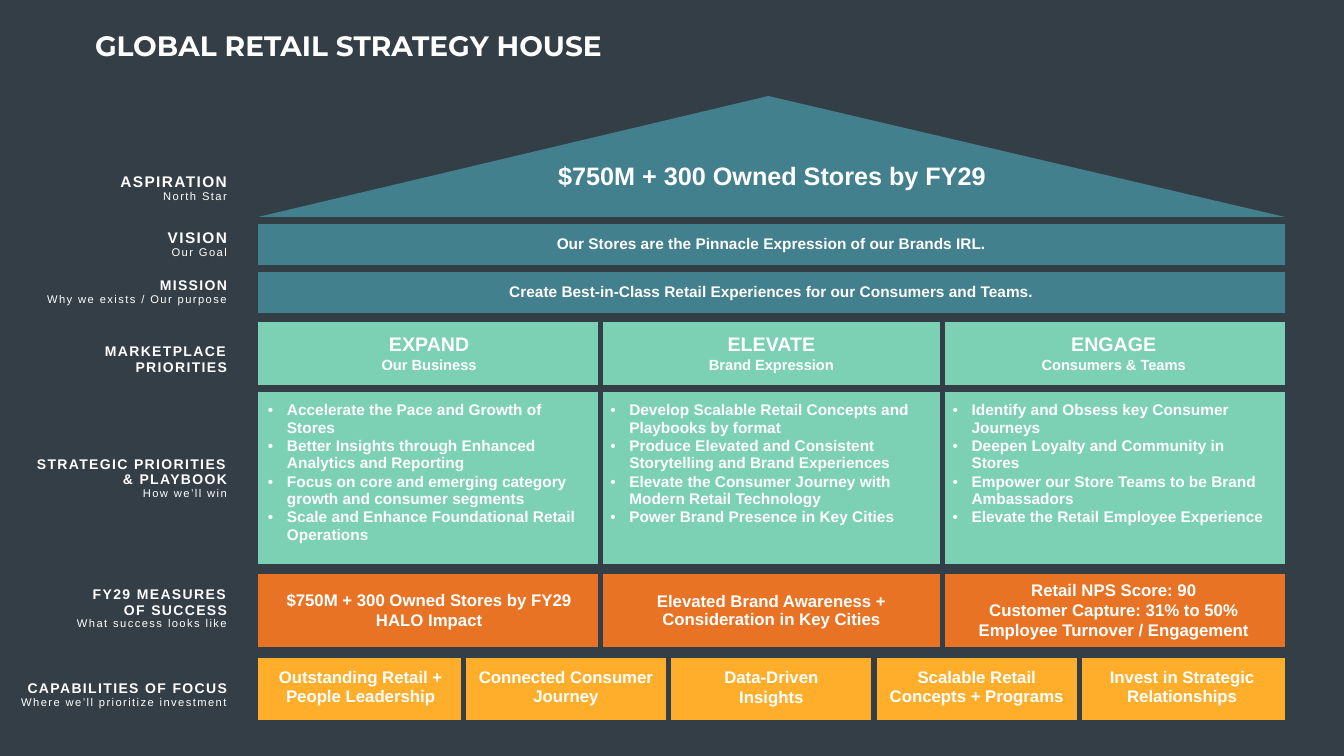
"""Build the retail strategy house slide."""
from lxml import etree
from pptx import Presentation
from pptx.dml.color import RGBColor
from pptx.enum.shapes import MSO_SHAPE
from pptx.enum.text import MSO_ANCHOR, PP_ALIGN
from pptx.oxml.ns import qn
from pptx.util import Emu, Pt

LEFT, MID, RIGHT = PP_ALIGN.LEFT, PP_ALIGN.CENTER, PP_ALIGN.RIGHT
TOP, CENTER = MSO_ANCHOR.TOP, MSO_ANCHOR.MIDDLE
TRIANGLE = MSO_SHAPE.ISOSCELES_TRIANGLE

DARK, WHITE = "333E47", "FFFFFF"
TEAL, MINT, ORANGE, YELLOW = "43808E", "7CD1B4", "E87324", "FFAE2C"
HOUSE_X, HOUSE_W = 258, 1027
GAP = 4.5

TITLE = "GLOBAL RETAIL STRATEGY HOUSE"
GOAL = "$750M + 300 Owned Stores by FY29"

LABELS = [
    (175, 28, 11, "ASPIRATION", "North Star"),
    (225, 40, 11, "VISION", "Our Goal"),
    (272, 40, 10, "MISSION", "Why we exists / Our purpose"),
    (336, 48, 10, "MARKETPLACE PRIORITIES", ""),
    (413, 131, 10, "STRATEGIC PRIORITIES\n& PLAYBOOK", "How we’ll win"),
    (582, 54, 10, "FY29 MEASURES\nOF SUCCESS", "What success looks like"),
    (665, 60, 10, "CAPABILITIES OF FOCUS", "Where we’ll prioritize investment"),
]

VISION = ["Our Stores are the Pinnacle Expression of our Brands IRL."]
MISSION = ["Create Best-in-Class Retail Experiences for our Consumers and Teams."]
PILLARS = [
    ["EXPAND", "Our Business"],
    ["ELEVATE", "Brand Expression"],
    ["ENGAGE", "Consumers & Teams"],
]
PLAYS = [
    ["Accelerate the Pace and Growth of Stores",
     "Better Insights through Enhanced Analytics and Reporting",
     "Focus on core and emerging category growth and consumer segments",
     "Scale and Enhance Foundational Retail Operations"],
    ["Develop Scalable Retail Concepts and Playbooks by format",
     "Produce Elevated and Consistent Storytelling and Brand Experiences",
     "Elevate the Consumer Journey with Modern Retail Technology",
     "Power Brand Presence in Key Cities"],
    ["Identify and Obsess key Consumer Journeys",
     "Deepen Loyalty and Community in Stores",
     "Empower our Store Teams to be Brand Ambassadors",
     "Elevate the Retail Employee Experience"],
]
RESULTS = [
    [GOAL, "HALO Impact"],
    ["Elevated Brand Awareness + Consideration in Key Cities"],
    ["Retail NPS Score: 90", "Customer Capture: 31% to 50%",
     "Employee Turnover / Engagement"],
]
SKILLS = [
    ["Outstanding Retail + People Leadership"],
    ["Connected Consumer Journey"],
    ["Data-Driven", "Insights"],
    ["Scalable Retail Concepts + Programs"],
    ["Invest in Strategic Relationships"],
]

FLOORS = [
    (224, 41, TEAL, CENTER, 10, [11], False, [VISION]),
    (272, 41, TEAL, CENTER, 10, [11], False, [MISSION]),
    (322, 63, MINT, CENTER, 10, [14, 10.5], False, PILLARS),
    (392, 172, MINT, TOP, 10, [11], True, PLAYS),
    (574, 73, ORANGE, CENTER, 5, [12], False, RESULTS),
    (658, 62, YELLOW, TOP, 10, [12], False, SKILLS),
]


def px(n):
    return Emu(round(n * 914400 / 100.8))


def paint(fill, color):
    fill.solid()
    fill.fore_color.rgb = RGBColor.from_string(color)


def write(para, text, size, bold=True, face="Arial", track=0):
    for i, line in enumerate(text.split("\n")):
        if i:
            para.add_line_break()
        run = para.add_run()
        run.text = line
        font = run.font
        font.size, font.bold, font.name = Pt(size), bold, face
        font.color.rgb = RGBColor.from_string(WHITE)
        if track:
            run._r.get_or_add_rPr().set("spc", str(track))


def next_para(frame, first, align):
    para = frame.paragraphs[0] if first else frame.add_paragraph()
    para.alignment = align
    return para


def add_box(slide, x, y, w, h, anchor, pads=(10, 5, 10, 5)):
    frame = slide.shapes.add_textbox(px(x), px(y), px(w), px(h)).text_frame
    frame.word_wrap = True
    frame.vertical_anchor = anchor
    (frame.margin_left, frame.margin_top,
     frame.margin_right, frame.margin_bottom) = map(px, pads)
    return frame


def add_bullet(para):
    props = para._p.get_or_add_pPr()
    props.set("marL", str(px(19)))
    props.set("indent", str(-px(19)))
    paint_el = etree.SubElement(props, qn("a:buClr"))
    etree.SubElement(paint_el, qn("a:srgbClr"), val=WHITE)
    etree.SubElement(props, qn("a:buFont"), typeface="Arial")
    etree.SubElement(props, qn("a:buChar"), char="•")


def edge_cell(cell, inner):
    props = cell._tc.get_or_add_tcPr()
    for i, side in enumerate("LRTB"):
        line = etree.Element(qn("a:ln" + side), w=str(Pt(GAP)))
        if side in inner:
            solid = etree.SubElement(line, qn("a:solidFill"))
            etree.SubElement(solid, qn("a:srgbClr"), val=DARK)
        else:
            etree.SubElement(line, qn("a:noFill"))
        props.insert(i, line)


def add_floor(slide, y, h, color, anchor, pad, sizes, listed, cells):
    count = len(cells)
    table = slide.shapes.add_table(
        1, count, px(HOUSE_X), px(y), px(HOUSE_W), px(h)).table
    table.first_row = table.horz_banding = False
    for i, lines in enumerate(cells):
        table.columns[i].width = px(HOUSE_W / count)
        cell = table.cell(0, i)
        paint(cell.fill, color)
        edge_cell(cell, ("L" if i else "") + ("R" if i < count - 1 else ""))
        cell.vertical_anchor = anchor
        cell.margin_left = cell.margin_right = px(pad)
        cell.margin_top = cell.margin_bottom = px(pad)
        for j, text in enumerate(lines):
            para = next_para(cell.text_frame, j == 0, LEFT if listed else MID)
            para.space_after = Pt(1)
            if listed:
                add_bullet(para)
            write(para, text, sizes[min(j, len(sizes) - 1)])


def add_label(slide, y, h, size, head, note):
    frame = add_box(slide, 14, y, 233, h, CENTER, (0, 0, 20, 0))
    for i, text in enumerate(filter(None, (head, note))):
        para = next_para(frame, i == 0, RIGHT)
        para.line_spacing = 0.9
        write(para, text, 8 if i else size, bold=i == 0, track=100)


def add_roof(slide):
    roof = slide.shapes.add_shape(
        TRIANGLE, px(HOUSE_X), px(96), px(HOUSE_W), px(121))
    roof.adjustments[0] = 0.497
    roof.shadow.inherit = False
    paint(roof.fill, TEAL)
    roof.line.fill.background()
    frame = add_box(slide, 468, 155, 608, 40, TOP)
    write(next_para(frame, True, MID), GOAL, 18)


def main():
    deck = Presentation()
    deck.slide_width, deck.slide_height = px(1344), px(756)
    slide = deck.slides.add_slide(deck.slide_layouts[6])
    paint(slide.background.fill, DARK)
    title = next_para(add_box(slide, 85, 26, 1259, 42, CENTER), True, LEFT)
    title.line_spacing = 0.9
    write(title, TITLE, 20, face="Montserrat")
    add_roof(slide)
    for floor in FLOORS:
        add_floor(slide, *floor)
    for label in LABELS:
        add_label(slide, *label)
    deck.save("out.pptx")


if __name__ == "__main__":
    main()
